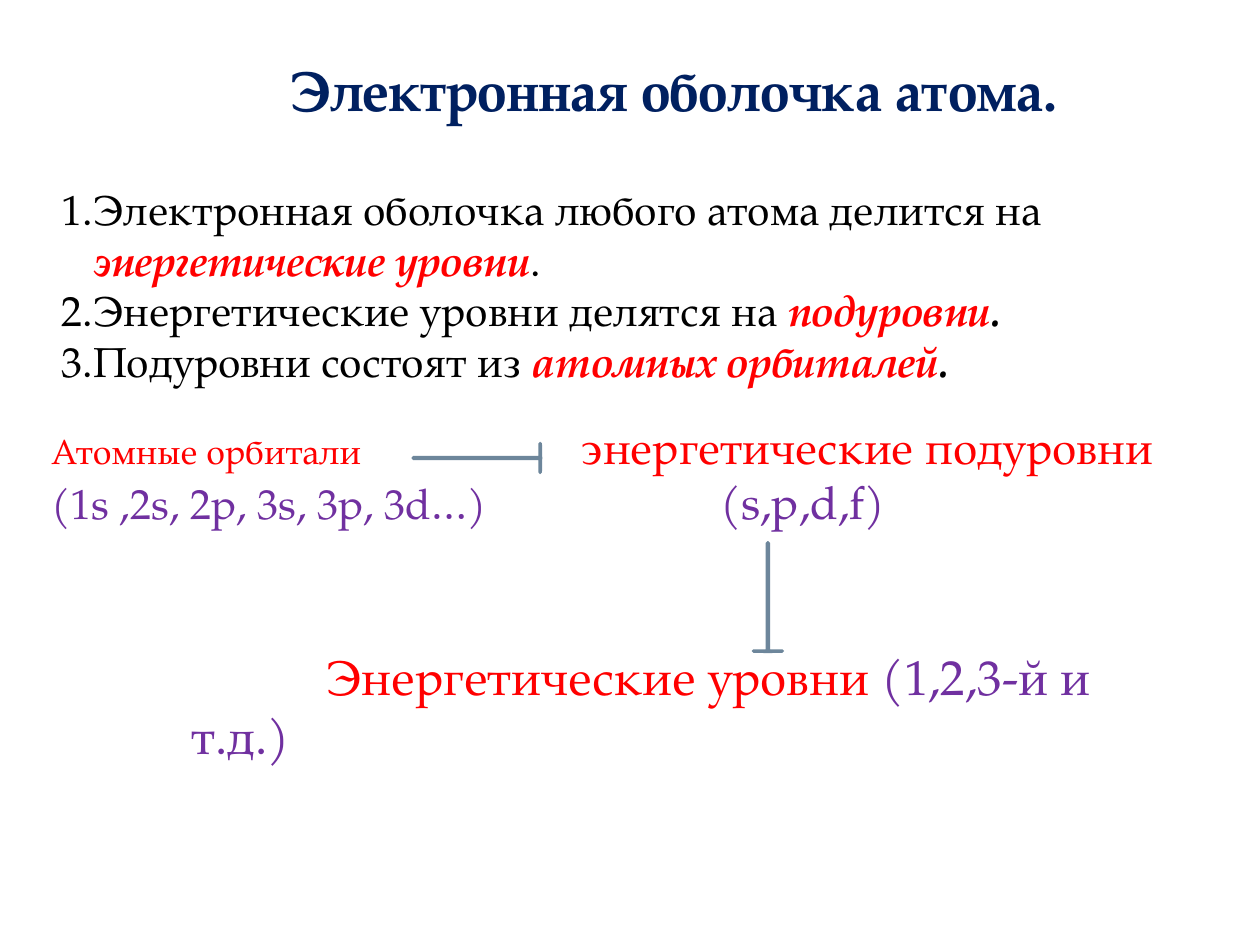
from typing import NamedTuple

from lxml.etree import SubElement
from pptx import Presentation
from pptx.dml.color import RGBColor
from pptx.enum.shapes import MSO_SHAPE as Kind
from pptx.enum.text import MSO_ANCHOR as Anchor, MSO_AUTO_SIZE as Fit, PP_ALIGN as Align
from pptx.oxml.ns import qn
from pptx.util import Inches, Pt

FACE = "TeX Gyre Pagella"
BLACK, RED, PURPLE, NAVY = "000000", "FF0000", "7030A0", "002060"


class Span(NamedTuple):
    text: str
    color: str = BLACK
    size: float | None = None
    strong: bool = False


class Arrow(NamedTuple):
    kind: Kind
    left: float
    top: float
    width: float
    height: float


RULES = [
    [Span("Электронная оболочка любого атома делится на "),
     Span("энергетические уровни", RED, strong=True), Span(".")],
    [Span("Энергетические уровни делятся на "),
     Span("подуровни", RED, strong=True), Span(".", strong=True)],
    [Span("Подуровни состоят из "),
     Span("атомных орбиталей", RED, strong=True), Span(".", strong=True)],
]
PAIRS = [
    (4.21, [Span("Атомные орбитали", RED, 20), Span("\t"),
            Span("энергетические подуровни", RED, 26)]),
    (5.31, [Span("(1s ,2s, 2p, 3s, 3p, 3d…)", PURPLE), Span("\t"),
            Span("(s,p,d,f)", PURPLE, 26)]),
]
LEVELS = [Span("Энергетические уровни ", RED), Span("(1,2,3-й и т.д.)", PURPLE)]
ARROWS = [
    Arrow(Kind.RIGHT_ARROW, 3.28, 3.52, 1.01, 0.23),
    Arrow(Kind.DOWN_ARROW, 5.98, 4.31, 0.23, 0.86),
]


def paint(code: str) -> RGBColor:
    """Turn a hex string into a colour."""
    return RGBColor.from_string(code)


def add_box(slide, left: float, top: float, width: float, height: float):
    """Add a wrapping text box and return its frame."""
    box = slide.shapes.add_textbox(Inches(left), Inches(top), Inches(width), Inches(height))
    box.text_frame.word_wrap = True
    return box.text_frame


def add_line(frame, index: int, spans: list[Span], size: float):
    """Write one paragraph of spans and return it."""
    line = frame.add_paragraph() if index else frame.paragraphs[0]
    line.font.name, line.font.size = FACE, Pt(size)
    for span in spans:
        run = line.add_run()
        run.text = span.text
        run.font.color.rgb = paint(span.color)
        if span.size:
            run.font.size = Pt(span.size)
        if span.strong:
            run.font.bold = run.font.italic = True
    return line


def indent(line, first: float, margin: float = 0):
    """Set the left margin and first-line indent and return the properties."""
    props = line._p.get_or_add_pPr()
    props.set("marL", str(Inches(margin)))
    props.set("indent", str(Inches(first)))
    return props


def add_number(line) -> None:
    """Number a paragraph with a hanging indent."""
    mark = SubElement(indent(line, -0.25, 0.25), qn("a:buAutoNum"), type="arabicPeriod")
    fix_order(mark)


def add_tab(line, pos: float) -> None:
    """Give a paragraph one left tab stop."""
    tabs = SubElement(line._p.get_or_add_pPr(), qn("a:tabLst"))
    SubElement(tabs, qn("a:tab"), pos=str(Inches(pos)), algn="l")
    fix_order(tabs)


def fix_order(node) -> None:
    """Put a node ahead of the default run properties."""
    node.getparent().find(qn("a:defRPr")).addprevious(node)


def add_arrow(slide, arrow: Arrow) -> None:
    """Draw one thin block arrow."""
    shape = slide.shapes.add_shape(arrow.kind, *map(Inches, arrow[1:]))
    shape.adjustments[0], shape.adjustments[1] = 0.03, 0.01
    shape.shadow.inherit = False
    shape.fill.solid()
    shape.fill.fore_color.rgb = paint("94B6D2")
    shape.line.color.rgb = paint("6D869B")
    shape.line.width = Pt(2)


def add_title(slide) -> None:
    """Place and format the title."""
    title = slide.shapes.title
    title.left, title.top, title.width, title.height = map(Inches, (1.25, 0.39, 8.2, 0.63))
    frame = title.text_frame
    frame.auto_size, frame.vertical_anchor = Fit.NONE, Anchor.TOP
    line = add_line(frame, 0, [Span("Электронная оболочка атома.", NAVY)], 32)
    line.alignment, line.font.bold = Align.CENTER, True


def main() -> None:
    """Build and save the slide."""
    deck = Presentation()
    deck.slide_width, deck.slide_height = Inches(10), Inches(7.5)
    slide = deck.slides.add_slide(deck.slide_layouts[5])
    add_title(slide)

    frame = add_box(slide, 0.39, 1.41, 9.14, 2.1)
    for index, spans in enumerate(RULES):
        add_number(add_line(frame, index, spans, 24))

    frame = add_box(slide, 0.31, 3.28, 9.22, 0.96)
    for index, (pos, spans) in enumerate(PAIRS):
        add_tab(add_line(frame, index, spans, 24), pos)

    for arrow in ARROWS:
        add_arrow(slide, arrow)

    frame = add_box(slide, 1.42, 5.08, 8.19, 1.03)
    frame.margin_right = Inches(0.3)
    indent(add_line(frame, 0, LEVELS, 28), 1.07)
    deck.save("out.pptx")


if __name__ == "__main__":
    main()
